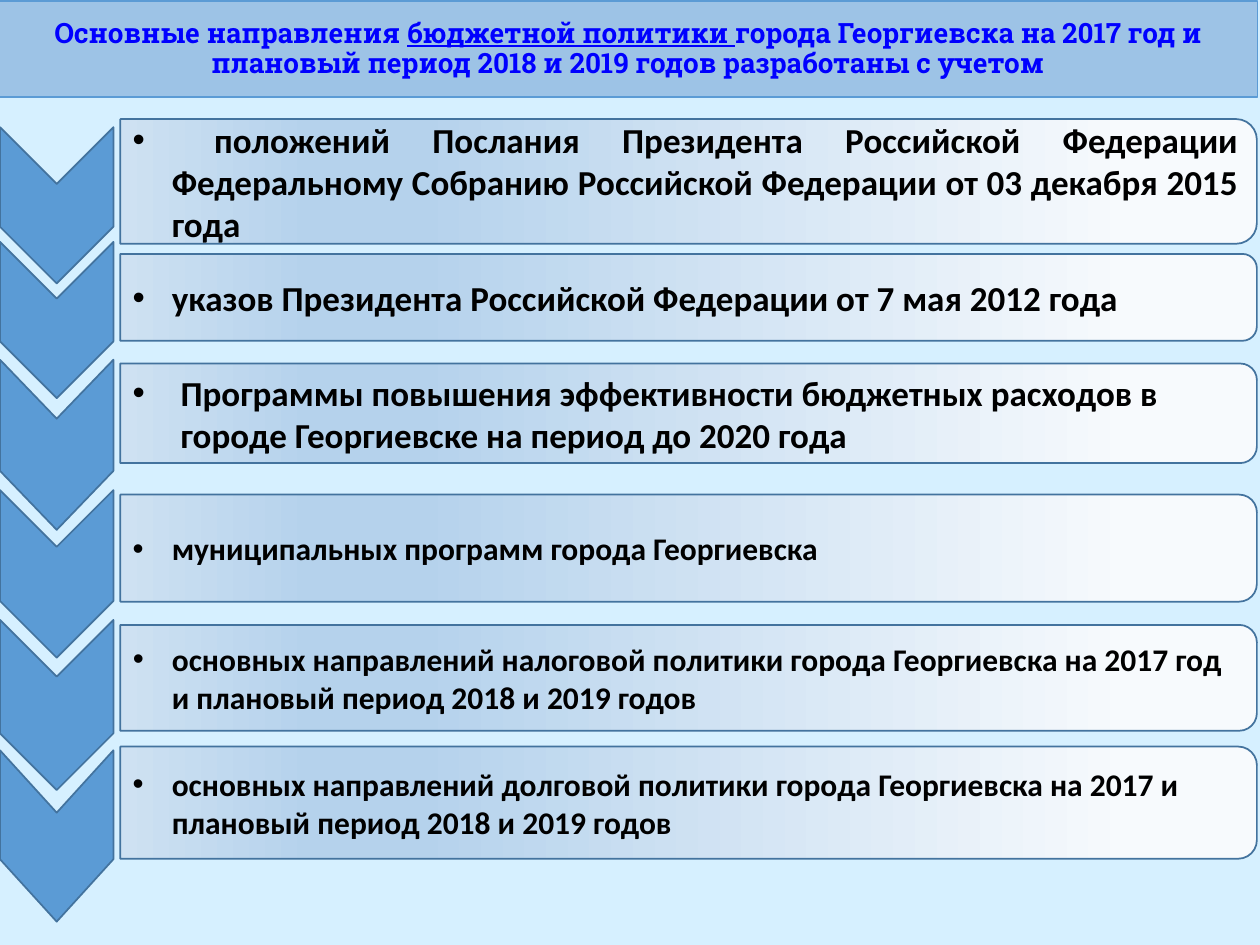
import lxml.etree
import pptx
import pptx.dml.color
import pptx.enum.shapes
import pptx.enum.text
import pptx.oxml
import pptx.oxml.ns
import pptx.util

RGBColor = pptx.dml.color.RGBColor
SHAPE = pptx.enum.shapes.MSO_SHAPE
ALIGN = pptx.enum.text.PP_ALIGN
ANCHOR = pptx.enum.text.MSO_ANCHOR

BACKGROUND = RGBColor(0xD6, 0xF0, 0xFF)
TITLE_FILL = RGBColor(0x9D, 0xC3, 0xE6)
TITLE_TEXT = RGBColor(0x00, 0x00, 0xFF)
ACCENT = RGBColor(0x5B, 0x9B, 0xD5)
OUTLINE = RGBColor(0x43, 0x73, 0x9E)
BODY_TEXT = RGBColor(0x00, 0x00, 0x00)
BAR_STOPS = [
    (11, RGBColor(0xF7, 0xFA, 0xFD)),
    (74, RGBColor(0xB5, 0xD2, 0xEC)),
    (83, RGBColor(0xB5, 0xD2, 0xEC)),
    (100, RGBColor(0xCE, 0xE1, 0xF2)),
]

COLUMNS, ROWS = 100, 75
BAR_CENTRE, BAR_LENGTH = 54.65, 90.2
CHEVRON_CENTRE, CHEVRON_WIDTH = 4.5, 9

TITLE = [
    ("Основные направления ", False),
    ("бюджетной политики ", True),
    ("города Георгиевска на 2017 год и плановый период 2018 и 2019 годов разработаны с учетом", False),
]

CHEVRONS = [
    (16.3, 12.4, 0.5),
    (25.4, 12.4, 0.5),
    (35.3, 13.5, 0.52),
    (45.55, 13.3, 0.5),
    (55.95, 13.5, 0.5),
    (66.35, 13.6, 0.55),
]

BARS = [
    (14.4, 9.9, 20, 0.31, ALIGN.JUSTIFY,
     " положений Послания Президента Российской Федерации Федеральному Собранию "
     "Российской Федерации от 03 декабря 2015 года"),
    (23.6, 6.9, 20, 0.31, ALIGN.LEFT,
     "указов Президента Российской Федерации от 7 мая 2012 года"),
    (32.8, 7.9, 20, 0.38, ALIGN.LEFT,
     "Программы повышения эффективности бюджетных расходов в городе Георгиевске на период до 2020 года"),
    (43.5, 8.5, 18, 0.31, ALIGN.JUSTIFY,
     "муниципальных программ города Георгиевска"),
    (53.8, 8.4, 18, 0.31, ALIGN.LEFT,
     "основных направлений налоговой политики города Георгиевска на 2017 год "
     "и плановый период 2018 и 2019 годов"),
    (63.7, 8.9, 18, 0.31, ALIGN.LEFT,
     "основных направлений долговой политики города Георгиевска на 2017 "
     "и плановый период 2018 и 2019 годов"),
]


class BudgetSlide:
    """Draw styled elements on one slide, measured in grid columns and rows."""

    def __init__(self, presentation):
        self.column = presentation.slide_width / COLUMNS
        self.row = presentation.slide_height / ROWS
        self.slide = presentation.slides.add_slide(presentation.slide_layouts[5])
        self.slide.background.fill.solid()
        self.slide.background.fill.fore_color.rgb = BACKGROUND

    def box(self, left, top, width, height):
        return (round(left * self.column), round(top * self.row),
                round(width * self.column), round(height * self.row))

    def paint(self, shape, fill, line):
        if fill is not None:
            shape.fill.solid()
            shape.fill.fore_color.rgb = fill
        shape.line.color.rgb = line
        shape.line.width = pptx.util.Pt(1)

    def style_run(self, run, font_name, size, color):
        run.font.name = font_name
        run.font.size = pptx.util.Pt(size)
        run.font.bold = True
        run.font.color.rgb = color

    def title(self, pieces):
        shape = self.slide.shapes.title
        shape.left, shape.top, shape.width, shape.height = self.box(-0.1, 0.1, 99.9, 7.6)
        shape.element.spPr.append(pptx.oxml.parse_xml(
            f'<a:prstGeom {pptx.oxml.ns.nsdecls("a")} prst="roundRect"><a:avLst>'
            '<a:gd name="adj" fmla="val 26900"/></a:avLst></a:prstGeom>'))
        self.paint(shape, TITLE_FILL, ACCENT)
        frame = shape.text_frame
        frame.word_wrap = True
        frame.auto_size = pptx.enum.text.MSO_AUTO_SIZE.NONE
        frame.vertical_anchor = ANCHOR.MIDDLE
        paragraph = frame.paragraphs[0]
        paragraph.alignment = ALIGN.CENTER
        paragraph.line_spacing = 0.9
        for text, underline in pieces:
            run = paragraph.add_run()
            run.text = text
            self.style_run(run, "Roboto Slab", 16, TITLE_TEXT)
            run.font.underline = underline

    def turned(self, kind, centre_x, centre_y, width, height):
        shape = self.slide.shapes.add_shape(
            kind, *self.box(centre_x - width / 2, centre_y - height / 2, width, height))
        shape.rotation = 90
        shape.shadow.inherit = False
        return shape

    def chevron(self, centre_y, length, notch):
        shape = self.turned(SHAPE.CHEVRON, CHEVRON_CENTRE, centre_y, length, CHEVRON_WIDTH)
        shape.adjustments[0] = notch
        self.paint(shape, ACCENT, OUTLINE)

    def gradient(self, shape):
        shape.fill.gradient()
        gradient = shape.element.spPr.find(pptx.oxml.ns.qn("a:gradFill"))
        for child in list(gradient):
            gradient.remove(child)
        gradient.set("rotWithShape", "1")
        stops = lxml.etree.SubElement(gradient, pptx.oxml.ns.qn("a:gsLst"))
        for position, color in BAR_STOPS:
            stop = lxml.etree.SubElement(stops, pptx.oxml.ns.qn("a:gs"), pos=str(position * 1000))
            lxml.etree.SubElement(stop, pptx.oxml.ns.qn("a:srgbClr"), val=str(color))
        lxml.etree.SubElement(gradient, pptx.oxml.ns.qn("a:lin"), ang="5400000", scaled="0")

    def bullet(self, paragraph, indent):
        properties = paragraph._p.get_or_add_pPr()
        properties.set("marL", str(pptx.util.Inches(indent)))
        properties.set("indent", str(-pptx.util.Inches(indent)))
        lxml.etree.SubElement(properties, pptx.oxml.ns.qn("a:buFont"), typeface="Arial")
        lxml.etree.SubElement(properties, pptx.oxml.ns.qn("a:buChar"), char="•")

    def bar(self, centre_y, height, size, indent, alignment, text):
        shape = self.turned(SHAPE.ROUND_2_SAME_RECTANGLE, BAR_CENTRE, centre_y, height, BAR_LENGTH)
        self.gradient(shape)
        self.paint(shape, None, OUTLINE)
        frame = shape.text_frame
        frame.word_wrap = True
        frame.vertical_anchor = ANCHOR.MIDDLE
        frame._txBody.bodyPr.set("vert", "vert270")
        frame.text = text
        paragraph = frame.paragraphs[0]
        paragraph.alignment = alignment
        self.bullet(paragraph, indent)
        self.style_run(paragraph.runs[0], "Calibri", size, BODY_TEXT)


def main():
    presentation = pptx.Presentation()
    presentation.slide_width = pptx.util.Inches(10)
    presentation.slide_height = pptx.util.Inches(7.5)
    slide = BudgetSlide(presentation)
    slide.title(TITLE)
    for chevron in CHEVRONS:
        slide.chevron(*chevron)
    for bar in BARS:
        slide.bar(*bar)
    presentation.save("out.pptx")


if __name__ == "__main__":
    main()
